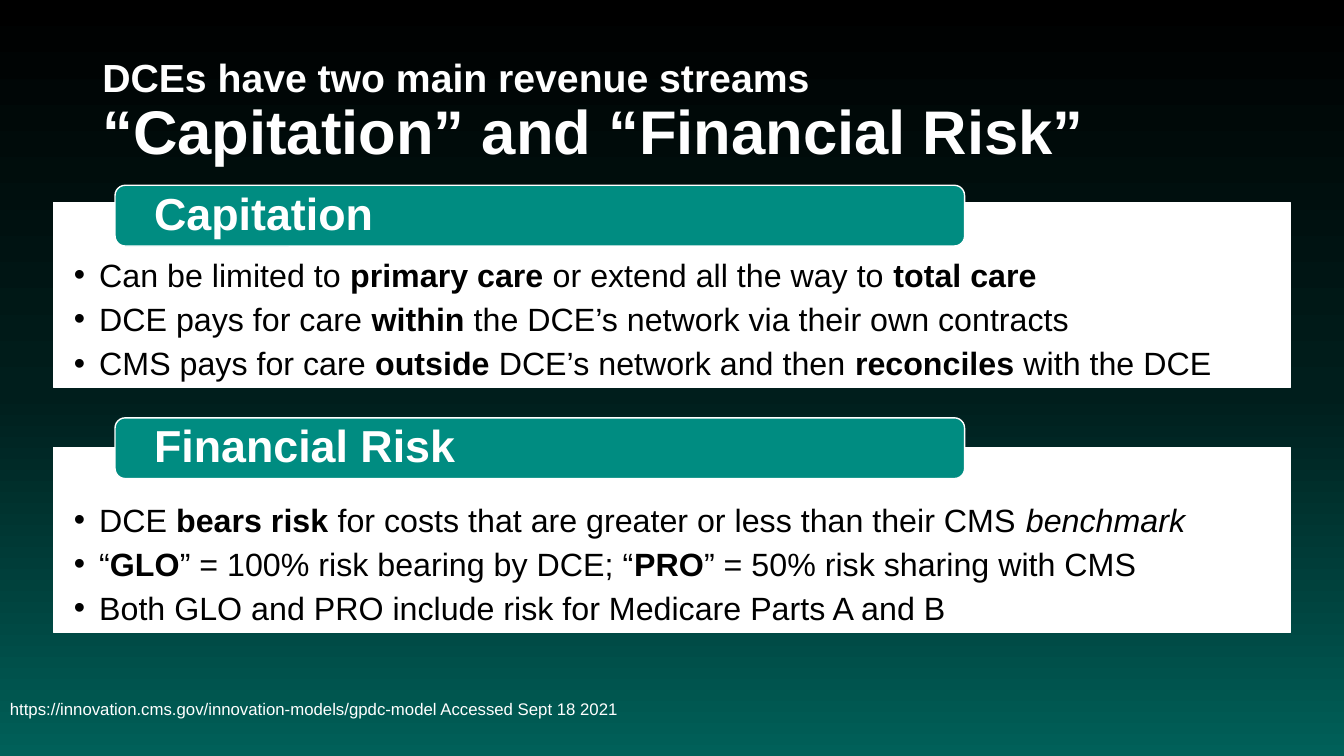
"""Build the slide on the two revenue streams of DCEs."""
from copy import deepcopy
from dataclasses import dataclass

from lxml.etree import SubElement
from pptx import Presentation
from pptx.dml.color import RGBColor
from pptx.enum.shapes import MSO_SHAPE
from pptx.enum.text import MSO_ANCHOR, PP_ALIGN
from pptx.oxml.ns import qn
from pptx.shapes.autoshape import Shape
from pptx.slide import Slide
from pptx.text.text import TextFrame, _Paragraph
from pptx.util import Cm, Pt

BLACK = RGBColor(0x00, 0x00, 0x00)
DARK_TEAL = RGBColor(0x00, 0x1E, 0x1C)
DEEP_TEAL = RGBColor(0x00, 0x60, 0x59)
TEAL = RGBColor(0x00, 0x8C, 0x81)
WHITE = RGBColor(0xFF, 0xFF, 0xFF)
FONT = "Arial"
INDENT = Cm(0.64)


@dataclass(frozen=True)
class Span:
    text: str
    bold: bool = False
    italic: bool = False
    size: int | None = None


@dataclass(frozen=True)
class Stream:
    heading: str
    panel_top: float
    heading_top: float
    bullets: list[list[Span]]


STREAMS = [
    Stream("Capitation", 5.11, 4.67, [
        [Span("Can be limited to "), Span("primary care", bold=True),
         Span(" or extend all the way to "), Span("total care", bold=True)],
        [Span("DCE pays for care "), Span("within", bold=True),
         Span(" the DCE’s network via their own contracts")],
        [Span("CMS pays for care "), Span("outside", bold=True),
         Span(" DCE’s network and then "), Span("reconciles", bold=True),
         Span(" with the DCE")],
    ]),
    Stream("Financial Risk", 11.28, 10.53, [
        [Span("DCE "), Span("bears risk ", bold=True),
         Span("for costs that are greater or less than their CMS "),
         Span("benchmark", italic=True)],
        [Span("“"), Span("GLO", bold=True),
         Span("” = 100% risk bearing by DCE; “"), Span("PRO", bold=True),
         Span("” = 50% risk sharing with CMS")],
        [Span("Both GLO and PRO include risk for Medicare Parts A and B")],
    ]),
]


def paint_background(page: Slide) -> None:
    """Fill the page with a gradient running from top to bottom."""
    fill = page.background.fill
    fill.gradient()
    fill.gradient_angle = 270
    stop_list = next(page.element.iter(qn("a:gsLst")))
    stop_list.insert(1, deepcopy(stop_list[0]))
    colors = [(0, BLACK), (0.52, DARK_TEAL), (1, DEEP_TEAL)]
    for stop, (position, color) in zip(fill.gradient_stops, colors):
        stop.position = position
        stop.color.rgb = color


def set_margins(frame: TextFrame, left: float, top: float,
                right: float, bottom: float) -> None:
    """Set the text margins in centimetres."""
    frame.margin_left, frame.margin_top = Cm(left), Cm(top)
    frame.margin_right, frame.margin_bottom = Cm(right), Cm(bottom)


def style(para: _Paragraph, size: int, color: RGBColor,
          bold: bool = False) -> None:
    """Set the alignment and font of a paragraph."""
    para.alignment = PP_ALIGN.LEFT
    para.font.name = FONT
    para.font.size = Pt(size)
    para.font.bold = bold
    para.font.color.rgb = color


def add_spans(para: _Paragraph, spans: list[Span]) -> None:
    """Add runs, marking only what differs from the paragraph."""
    for span in spans:
        run = para.add_run()
        run.text = span.text
        if span.bold:
            run.font.bold = True
        if span.italic:
            run.font.italic = True
        if span.size:
            run.font.size = Pt(span.size)


def add_bullet(para: _Paragraph) -> None:
    """Give a paragraph a hanging round bullet."""
    properties = para._p.get_or_add_pPr()
    properties.set("marL", str(INDENT))
    properties.set("indent", str(-INDENT))
    SubElement(properties, qn("a:buFont"), typeface=FONT)
    SubElement(properties, qn("a:buChar"), char="•")


def add_block(page: Slide, kind: MSO_SHAPE, left: float, top: float,
              width: float, height: float, color: RGBColor) -> Shape:
    """Add a filled shape with a thin white outline."""
    block = page.shapes.add_shape(kind, Cm(left), Cm(top), Cm(width), Cm(height))
    block.shadow.inherit = False
    block.fill.solid()
    block.fill.fore_color.rgb = color
    block.line.color.rgb = WHITE
    block.line.width = Pt(1)
    block.text_frame.word_wrap = True
    return block


def add_stream(page: Slide, stream: Stream) -> None:
    """Add a bulleted panel with its heading tab."""
    panel = add_block(page, MSO_SHAPE.RECTANGLE, 1.35, stream.panel_top,
                      31.17, 4.66, WHITE)
    frame = panel.text_frame
    frame.vertical_anchor = MSO_ANCHOR.TOP
    set_margins(frame, 0.51, 1.32, 0.25, 0.46)
    for index, spans in enumerate(stream.bullets):
        para = frame.add_paragraph() if index else frame.paragraphs[0]
        para.space_after = Pt(4)
        add_bullet(para)
        style(para, 23, BLACK)
        add_spans(para, spans)

    tab = add_block(page, MSO_SHAPE.ROUNDED_RECTANGLE, 2.9, stream.heading_top,
                    21.41, 1.53, TEAL)
    tab.text_frame.vertical_anchor = MSO_ANCHOR.MIDDLE
    set_margins(tab.text_frame, 0.91, 0.1, 0.91, 0.1)
    para = tab.text_frame.paragraphs[0]
    para.line_spacing = 0.9
    style(para, 32, WHITE, bold=True)
    add_spans(para, [Span(stream.heading)])


def add_text(page: Slide, left: float, top: float, width: float, height: float,
             size: int, bold: bool, lines: list[Span]) -> None:
    """Add a white paragraph whose lines are split by line breaks."""
    box = page.shapes.add_textbox(Cm(left), Cm(top), Cm(width), Cm(height))
    frame = box.text_frame
    frame.word_wrap = True
    frame.vertical_anchor = MSO_ANCHOR.MIDDLE
    para = frame.paragraphs[0]
    para.line_spacing = 0.9
    style(para, size, WHITE, bold)
    for index, line in enumerate(lines):
        if index:
            para.add_line_break()
        add_spans(para, [line])


def main() -> None:
    """Build and save the deck."""
    deck = Presentation()
    deck.slide_width, deck.slide_height = Cm(33.87), Cm(19.05)
    page = deck.slides.add_slide(deck.slide_layouts[6])
    paint_background(page)
    for stream in STREAMS:
        add_stream(page, stream)
    add_text(page, 2.33, 1.01, 29.21, 3.68, 28, True, [
        Span("DCEs have two main revenue streams"),
        Span("“Capitation” and “Financial Risk”", size=44),
    ])
    add_text(page, 0, 16.71, 22.86, 2.34, 12, False, [
        Span("https://innovation.cms.gov/innovation-models/gpdc-model "
             "Accessed Sept 18 2021"),
    ])
    deck.save("out.pptx")


if __name__ == "__main__":
    main()
